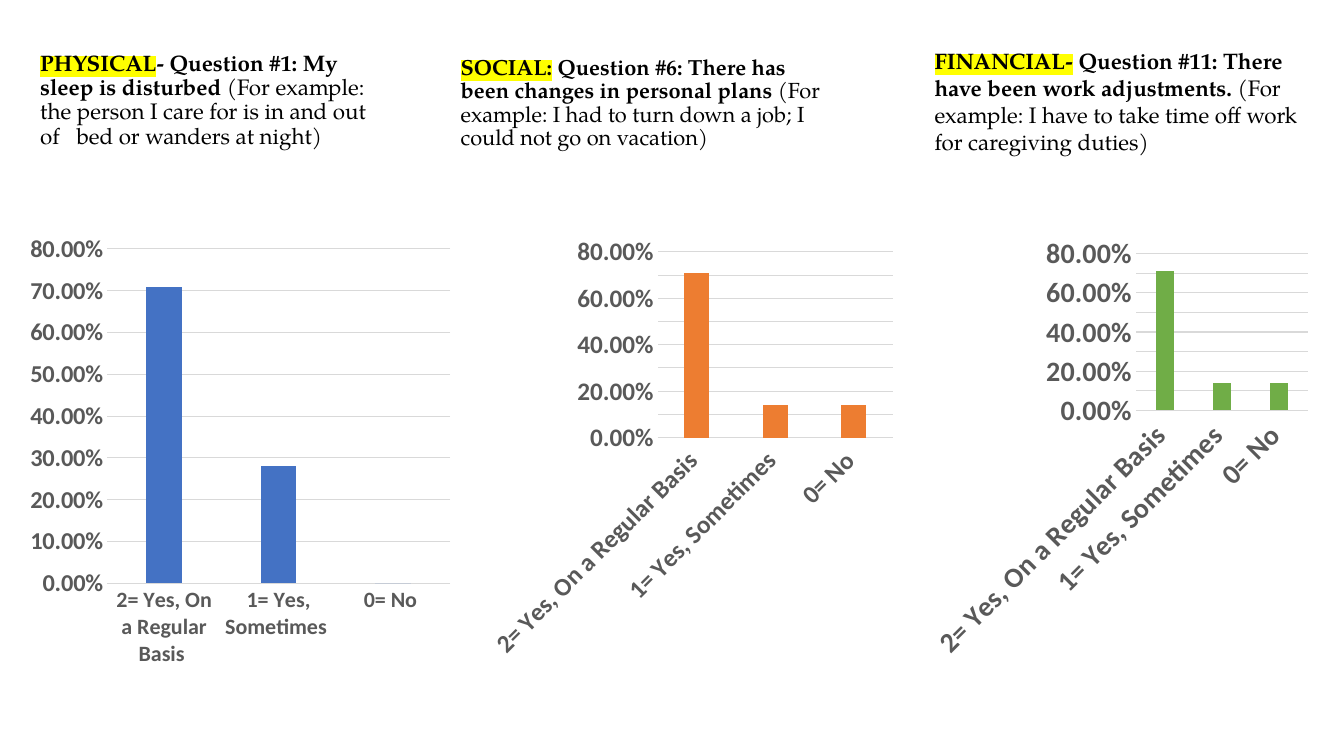
import pptx
from pptx.chart.data import CategoryChartData
from pptx.dml.color import RGBColor
from pptx.enum.chart import XL_CHART_TYPE, XL_TICK_MARK
from pptx.enum.text import MSO_ANCHOR
from pptx.oxml import parse_xml
from pptx.oxml.ns import nsdecls
from pptx.util import Inches, Pt

BLACK = RGBColor(0x00, 0x00, 0x00)
GRAY = RGBColor(0x59, 0x59, 0x59)
PALE = RGBColor(0xD9, 0xD9, 0xD9)
BLUE = RGBColor(0x44, 0x72, 0xC4)
ORANGE = RGBColor(0xED, 0x7D, 0x31)
GREEN = RGBColor(0x70, 0xAD, 0x47)
MARKER = "FFFF00"
SERIF = "TeX Gyre Pagella"
SANS = "Calibri"

ANSWERS = ["2= Yes, On a Regular Basis ", "1= Yes, Sometimes ", "0= No "]

# Boxes are left, top, width, height; "plot" is a share of the chart's box,
# or None where the chart finds its own room for the slanted labels.
PANELS = [
    dict(
        topic="PHYSICAL",
        claim="- Question #1: My sleep is disturbed ",
        example="(For example: the person I care for is in and out of   bed or wanders at night)",
        text_box=(0.3, 0.47, 3.5, 1.53), text_size=16, spacing=0.9,
        chart_box=(0.3, 1.91, 4.17, 4.72), plot=(0.18, 0.12, 0.82, 0.71),
        values=(0.71, 0.28, 0), color=BLUE, cat_size=15.8, val_size=17.5, turn=0,
    ),
    dict(
        topic="SOCIAL:",
        claim=" Question #6: There has been changes in personal plans ",
        example="(For example: I had to turn down a job; I could not go on vacation)",
        text_box=(4.47, 0.51, 3.78, 1.49), text_size=15.6, spacing=0.9,
        chart_box=(4.77, 2.26, 4.17, 4.37), plot=None,
        values=(0.71, 0.14, 0.14), color=ORANGE, cat_size=18, val_size=18, turn=-45,
    ),
    dict(
        topic="FINANCIAL-",
        claim=" Question #11: There have been work adjustments. ",
        example="(For example: I have to take time off work for caregiving duties)",
        text_box=(9.17, 0.42, 3.88, 1.18), text_size=16, spacing=1.0,
        chart_box=(9.16, 2.26, 3.89, 4.37), plot=None,
        values=(0.71, 0.14, 0.14), color=GREEN, cat_size=20, val_size=20, turn=-45,
    ),
]


def mark(run):
    """Put a highlighter colour behind a run."""
    run._r.get_or_add_rPr().append(parse_xml(
        f'<a:highlight {nsdecls("a")}><a:srgbClr val="{MARKER}"/></a:highlight>'))


def add_question(slide, panel):
    box = slide.shapes.add_textbox(*map(Inches, panel["text_box"]))
    frame = box.text_frame
    frame.word_wrap = True
    frame.vertical_anchor = MSO_ANCHOR.TOP
    para = frame.paragraphs[0]
    para.line_spacing = panel["spacing"]
    for part in ("topic", "claim", "example"):
        run = para.add_run()
        run.text = panel[part]
        run.font.size = Pt(panel["text_size"])
        run.font.bold = part != "example"
        run.font.color.rgb = BLACK
        if part == "topic":
            mark(run)
        run.font.name = SERIF


def style_axis(axis, size):
    axis.major_tick_mark = axis.minor_tick_mark = XL_TICK_MARK.NONE
    font = axis.tick_labels.font
    font.name, font.size, font.bold = SANS, Pt(size), True
    font.color.rgb = GRAY


def place_plot(chart, shares):
    """Fix the inner plot area inside the chart's box."""
    area = chart._chartSpace.chart.plotArea
    for old in area.xpath("c:layout"):
        area.remove(old)
    sizes = "".join(f'<c:{key} val="{share}"/>' for key, share in zip("xywh", shares))
    area.insert(0, parse_xml(
        f'<c:layout {nsdecls("c")}><c:manualLayout><c:layoutTarget val="inner"/>'
        f'<c:xMode val="edge"/><c:yMode val="edge"/>{sizes}'
        '</c:manualLayout></c:layout>'))


def add_bars(slide, panel):
    data = CategoryChartData(number_format="0.00%")
    data.categories = ANSWERS
    data.add_series("Series 1", panel["values"])
    chart = slide.shapes.add_chart(
        XL_CHART_TYPE.COLUMN_CLUSTERED, *map(Inches, panel["chart_box"]), data).chart
    chart.has_title = chart.has_legend = False
    chart.font.name, chart.font.size = SANS, Pt(10)
    chart.font.color.rgb = BLACK

    plot = chart.plots[0]
    plot.gap_width, plot.overlap = 219, -27
    plot.vary_by_categories = False
    fill = plot.series[0].format.fill
    fill.solid()
    fill.fore_color.rgb = panel["color"]

    cats, vals = chart.category_axis, chart.value_axis
    style_axis(cats, panel["cat_size"])
    style_axis(vals, panel["val_size"])
    cats._element.txPr.bodyPr.set("rot", str(panel["turn"] * 60000))
    vals.minimum_scale, vals.maximum_scale, vals.major_unit = 0, 0.8, 0.1
    vals.tick_labels.number_format = "0.00%"
    vals.tick_labels.number_format_is_linked = False
    vals.format.line.fill.background()
    vals.has_major_gridlines = True
    for line in (cats.format.line, vals.major_gridlines.format.line):
        line.color.rgb = PALE
        line.width = Pt(0.75)
    if panel["plot"]:
        place_plot(chart, panel["plot"])


def main():
    deck = pptx.Presentation()
    deck.slide_width, deck.slide_height = Inches(13.33), Inches(7.5)
    slide = deck.slides.add_slide(deck.slide_layouts[6])
    for panel in PANELS:
        add_question(slide, panel)
        add_bars(slide, panel)
    deck.save("out.pptx")


if __name__ == "__main__":
    main()
